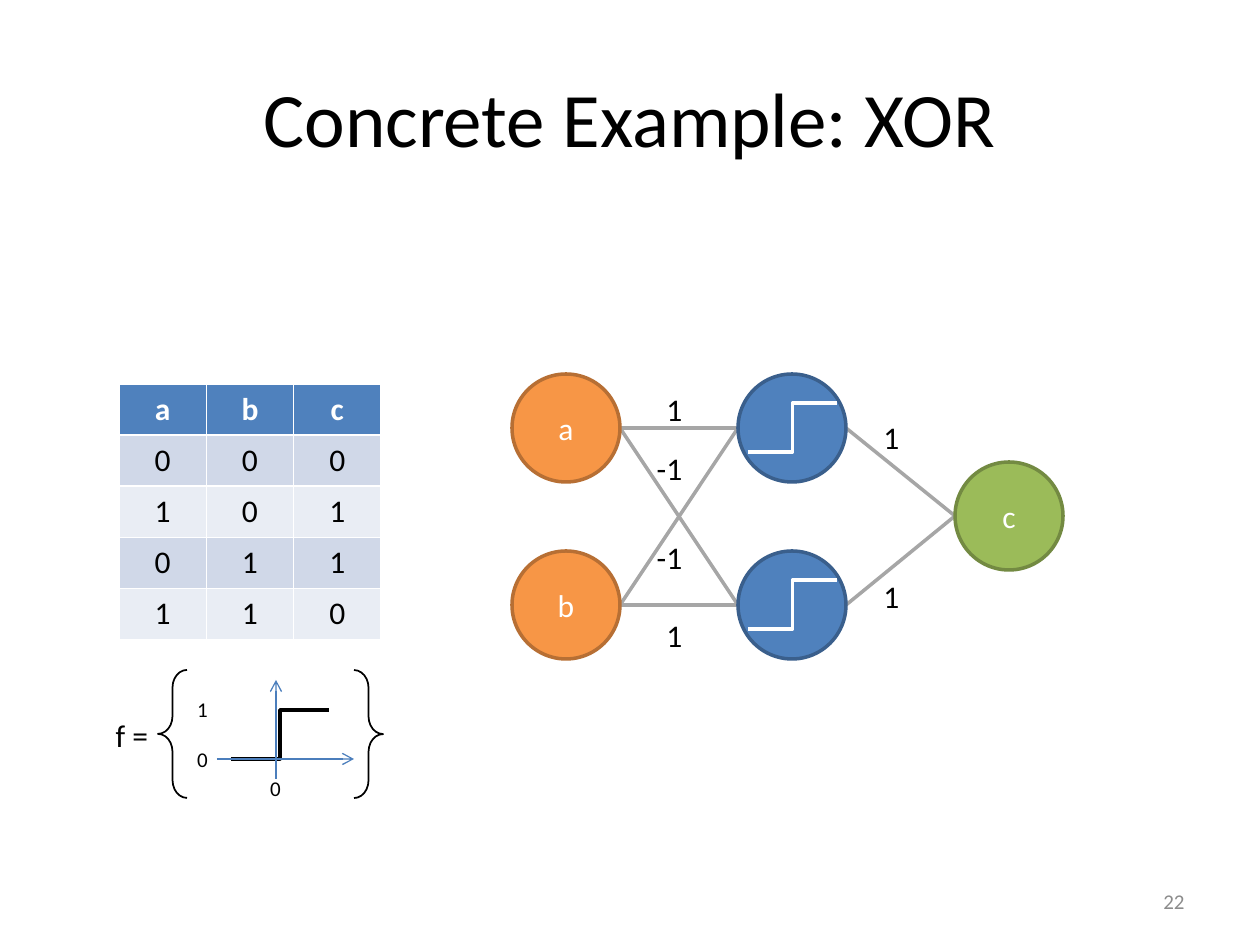
from lxml.etree import SubElement
from pptx import Presentation
from pptx.dml.color import RGBColor
from pptx.enum.shapes import MSO_CONNECTOR as LINK, MSO_SHAPE as SHAPE
from pptx.enum.text import MSO_ANCHOR as ANCHOR, PP_ALIGN as ALIGN
from pptx.oxml.ns import qn
from pptx.util import Pt

PX = 914400 / 126
FONT = "Calibri"
BLACK = RGBColor(0x00, 0x00, 0x00)
WHITE = RGBColor(0xFF, 0xFF, 0xFF)
GRAY = RGBColor(0xA6, 0xA6, 0xA6)
NUMBER_GRAY = RGBColor(0x8C, 0x8C, 0x8C)
AXIS_BLUE = RGBColor(0x4B, 0x7E, 0xBC)
BLUE, BLUE_EDGE = RGBColor(0x4F, 0x81, 0xBD), RGBColor(0x3A, 0x5F, 0x8C)
ORANGE, ORANGE_EDGE = RGBColor(0xF7, 0x96, 0x46), RGBColor(0xB7, 0x6F, 0x34)
GREEN, GREEN_EDGE = RGBColor(0x9B, 0xBB, 0x59), RGBColor(0x73, 0x8A, 0x42)
BAND_DARK, BAND_LIGHT = RGBColor(0xD0, 0xD8, 0xE8), RGBColor(0xE9, 0xED, 0xF4)

deck = Presentation()
deck.slide_width, deck.slide_height = int(1260 * PX), int(945 * PX)
page = deck.slides.add_slide(deck.slide_layouts[5])


def write(frame, text, size, color, align=ALIGN.CENTER):
    frame.word_wrap = True
    para = frame.paragraphs[0]
    para.text, para.alignment = text, align
    para.font.name, para.font.size = FONT, Pt(size)
    para.font.color.rgb = color
    return para


def draw_line(kind, ends, color, width, arrow=False):
    line = page.shapes.add_connector(kind, *[int(end * PX) for end in ends])
    line.line.color.rgb, line.line.width = color, Pt(width)
    if arrow:
        SubElement(line.line._get_or_add_ln(), qn("a:tailEnd"), type="arrow")
    SubElement(line._element.spPr, qn("a:effectLst"))


# Title
title = page.shapes.title
title.left, title.top, title.width, title.height = [
    int(side * PX) for side in (63, 38, 1134, 157)]
title.text_frame.vertical_anchor = ANCHOR.MIDDLE
write(title.text_frame, "Concrete Example: XOR", 44, BLACK)

# Network edges, behind the nodes
NODE = 108
INPUT_X, HIDDEN_X, OUTPUT_X = 512, 738, 955
TOP, BOTTOM = 374, 551
OUTPUT_Y = 462
for start in (TOP, BOTTOM):
    for end in (TOP, BOTTOM):
        draw_line(LINK.STRAIGHT, (INPUT_X + NODE, start + NODE / 2,
                                  HIDDEN_X, end + NODE / 2), GRAY, 2)
    draw_line(LINK.STRAIGHT, (HIDDEN_X + NODE, start + NODE / 2,
                              OUTPUT_X, OUTPUT_Y + NODE / 2), GRAY, 2)

# Network nodes
for x, y, name, fill, edge in (
        (OUTPUT_X, OUTPUT_Y, "c", GREEN, GREEN_EDGE),
        (INPUT_X, TOP, "a", ORANGE, ORANGE_EDGE),
        (INPUT_X, BOTTOM, "b", ORANGE, ORANGE_EDGE),
        (HIDDEN_X, TOP, "", BLUE, BLUE_EDGE),
        (HIDDEN_X, BOTTOM, "", BLUE, BLUE_EDGE)):
    node = page.shapes.add_shape(SHAPE.OVAL, int(x * PX), int(y * PX),
                                 int(NODE * PX), int(NODE * PX))
    node.shadow.inherit = False
    node.fill.solid()
    node.fill.fore_color.rgb = fill
    node.line.color.rgb, node.line.width = edge, Pt(2)
    if name:
        node.text_frame.vertical_anchor = ANCHOR.MIDDLE
        write(node.text_frame, name, 18, WHITE)

# Step symbols in the hidden nodes
for y in (TOP, BOTTOM):
    draw_line(LINK.ELBOW, (HIDDEN_X + 10, y + 78, HIDDEN_X + 99, y + 29), WHITE, 2)

# Truth table
rows = ("abc", "000", "101", "011", "110")
table = page.shapes.add_table(5, 3, int(119 * PX), int(384 * PX),
                              int(262 * PX), int(255 * PX)).table
for r, values in enumerate(rows):
    for c, value in enumerate(values):
        cell = table.cell(r, c)
        cell.fill.solid()
        cell.fill.fore_color.rgb = BLUE if r == 0 else BAND_DARK if r % 2 else BAND_LIGHT
        para = write(cell.text_frame, value, 18, BLACK if r else WHITE)
        para.font.bold = r == 0

# Step function plot: curve, then axes
draw_line(LINK.ELBOW, (231, 759, 329, 710), BLACK, 2)
draw_line(LINK.STRAIGHT, (276, 779, 276, 680), AXIS_BLUE, 0.75, arrow=True)
draw_line(LINK.STRAIGHT, (217, 759, 354, 759), AXIS_BLUE, 0.75, arrow=True)

# Braces around the plot
for x, turn in ((158, 0), (354, 180)):
    brace = page.shapes.add_shape(SHAPE.LEFT_BRACE, int(x * PX), int(670 * PX),
                                  int(29 * PX), int(128 * PX))
    brace.shadow.inherit = False
    brace.adjustments[0] = 0.61
    brace.rotation = turn
    brace.fill.background()
    brace.line.color.rgb, brace.line.width = BLACK, Pt(1)

# Plot labels and edge weights
for text, x, y, width, height, size in (
        ("0", 178, 740, 49, 38, 12),
        ("1", 178, 690, 49, 38, 12),
        ("0", 246, 769, 59, 38, 12),
        ("f =", 88, 710, 88, 50, 18),
        ("1", 650, 384, 49, 50, 18),
        ("1", 650, 610, 49, 50, 18),
        ("-1", 640, 532, 59, 50, 18),
        ("-1", 640, 443, 59, 50, 18),
        ("1", 867, 412, 49, 50, 18),
        ("1", 867, 571, 49, 50, 18)):
    label = page.shapes.add_textbox(int(x * PX), int(y * PX),
                                    int(width * PX), int(height * PX))
    write(label.text_frame, text, size, BLACK)

# Slide number
number = page.shapes.add_textbox(int(903 * PX), int(876 * PX),
                                 int(294 * PX), int(50 * PX))
number.text_frame.vertical_anchor = ANCHOR.MIDDLE
write(number.text_frame, "22", 12, NUMBER_GRAY, ALIGN.RIGHT)

deck.save("out.pptx")
